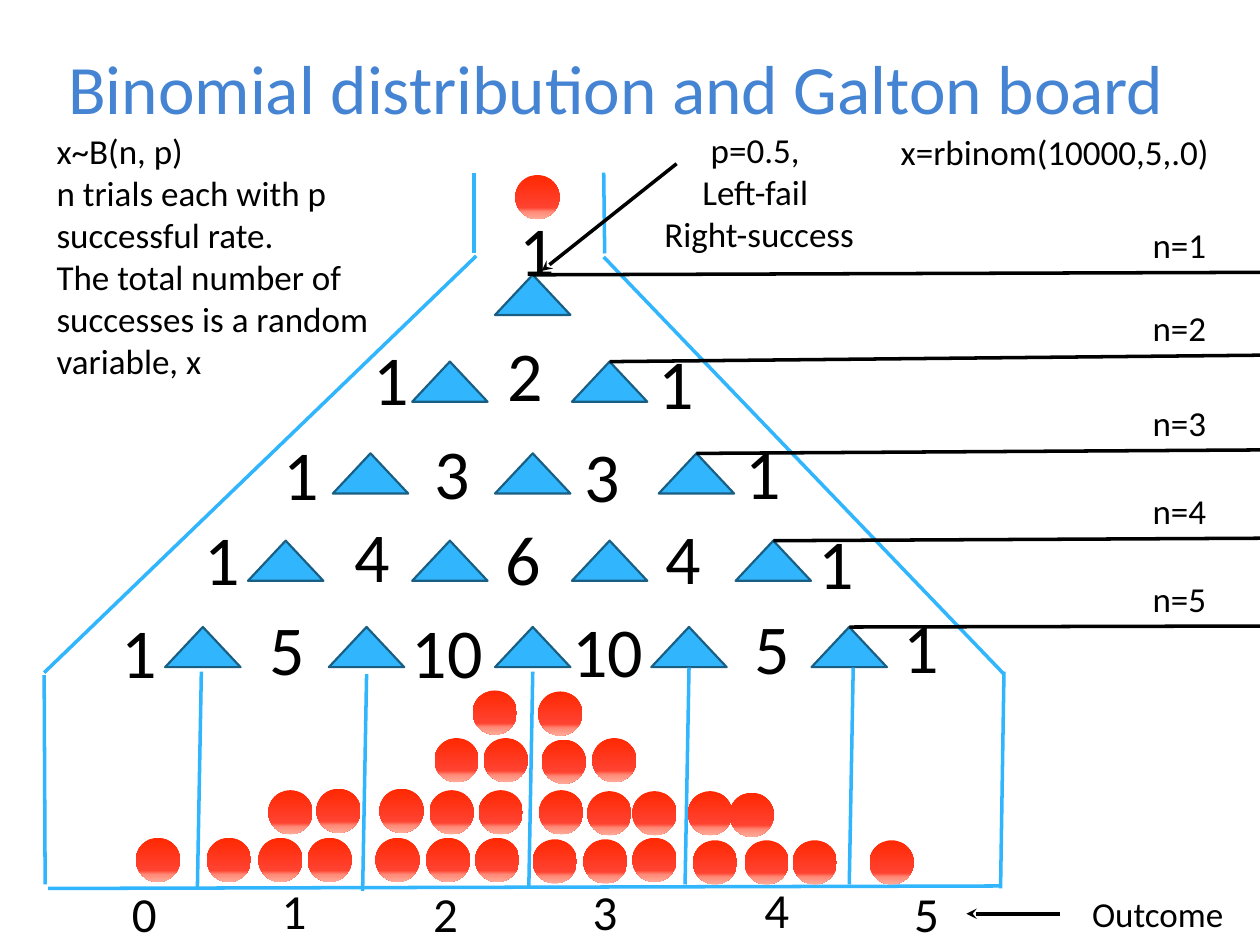
from dataclasses import dataclass
from math import comb

from lxml.etree import SubElement
from pptx import Presentation
from pptx.dml.color import RGBColor
from pptx.enum.shapes import MSO_CONNECTOR, MSO_SHAPE
from pptx.enum.text import MSO_ANCHOR, MSO_AUTO_SIZE, PP_ALIGN
from pptx.oxml import parse_xml
from pptx.oxml.ns import nsdecls, qn
from pptx.util import Cm, Pt

BLACK = RGBColor(0x00, 0x00, 0x00)
TITLE_BLUE = RGBColor(0x45, 0x84, 0xD3)
BOARD_BLUE = RGBColor(0x31, 0xB6, 0xFD)
PEG_EDGE = RGBColor(0x19, 0x5F, 0x84)
BALL_STOPS = (
    (0, RGBColor(0xFF, 0x28, 0x02)),
    (74, RGBColor(0xFF, 0x43, 0x31)),
    (83, RGBColor(0xFF, 0x89, 0x76)),
    (100, RGBColor(0xFF, 0xAA, 0x99)),
)
FONT = "Calibri"

# All lengths below are in centimetres
SLIDE_W, SLIDE_H = 25.4, 19.05
PEG_W, PEG_H = 1.52, 0.81
BALL = 0.89
DIGIT_W, DIGIT_H = 1.6, 1.96
LABEL_H = 1.1


@dataclass(frozen=True)
class PegRow:
    top: float
    lefts: tuple[float, ...]
    guide_y: float
    counts: tuple[tuple[float, float], ...] = ()


PEG_ROWS = (
    PegRow(5.54, (9.98,), 5.49),
    PegRow(7.29, (8.31, 11.53), 7.16,
           ((7.09, 6.63), (9.78, 6.55), (12.83, 6.71))),
    PegRow(9.14, (6.71, 9.98, 13.28), 9.07,
           ((5.28, 8.56), (8.31, 8.53), (11.35, 8.59), (14.58, 8.53))),
    PegRow(10.9, (5.0, 8.31, 11.53, 14.83), 10.85,
           ((3.68, 10.26), (6.71, 10.21), (9.75, 10.26), (12.98, 10.24),
            (16.05, 10.34))),
    PegRow(12.64, (3.33, 6.63, 9.98, 13.13, 16.36), 12.62,
           ((2.01, 12.14), (5.0, 12.09), (8.05, 12.14), (11.28, 12.12),
            (14.76, 12.07), (17.78, 12.04))),
)

WALLS = (
    (9.55, 3.48, 9.55, 5.11),
    (12.17, 3.48, 12.19, 5.11),
    (9.6, 5.16, 0.89, 13.56),
    (12.17, 5.18, 20.24, 13.59),
    (20.17, 17.86, 0.97, 17.91),
    (0.89, 13.61, 0.91, 17.83),
    (20.24, 13.54, 20.17, 17.91),
)
DIVIDER_TOPS = ((4.06, 13.54), (7.39, 13.59), (10.74, 13.54), (13.89, 13.46),
                (17.2, 13.46))
DIVIDER_LEAN, DIVIDER_H = 0.08, 4.37

# Top of each run of balls, with the left edge of every ball in it
BALL_RUNS = (
    (3.53, (10.39,)),
    (16.89, (2.74, 4.17, 5.21, 6.2, 7.57, 8.59, 9.58, 12.75)),
    (16.92, (10.74, 11.76)),
    (16.94, (13.97, 15.01, 15.98, 17.53)),
    (15.93, (5.41, 8.66, 9.65, 10.87)),
    (15.9, (6.38, 7.65)),
    (15.98, (14.71,)),
    (15.95, (11.84, 12.75, 13.87)),
    (14.91, (10.92,)),
    (14.88, (8.76, 9.75, 11.94)),
    (13.94, (10.85,)),
    (13.92, (9.53,)),
)
OUTCOMES = ((2.11, 17.68), (5.13, 17.63), (8.18, 17.68), (11.4, 17.65),
            (14.86, 17.6), (17.88, 17.68))


def write(frame, text: str, *, size: float = 20, color: RGBColor = BLACK,
          align=PP_ALIGN.CENTER) -> None:
    frame.word_wrap = True
    frame.text = text
    for paragraph in frame.paragraphs:
        paragraph.alignment = align
        for run in paragraph.runs:
            run.font.name, run.font.size = FONT, Pt(size)
            run.font.color.rgb = color


def add_label(slide, text: str, left: float, top: float, width: float,
              height: float = LABEL_H, **style) -> None:
    box = slide.shapes.add_textbox(Cm(left), Cm(top), Cm(width), Cm(height))
    write(box.text_frame, text, **style)
    box.text_frame.auto_size = MSO_AUTO_SIZE.SHAPE_TO_FIT_TEXT


def add_count(slide, number: int, left: float, top: float) -> None:
    width = DIGIT_W if number < 10 else 1.94
    add_label(slide, str(number), left, top, width, DIGIT_H, size=40)


def add_line(slide, x1: float, y1: float, x2: float, y2: float, *,
             color: RGBColor = BLACK, arrow: bool = False):
    line = slide.shapes.add_connector(
        MSO_CONNECTOR.STRAIGHT, Cm(x1), Cm(y1), Cm(x2), Cm(y2))
    line.line.color.rgb = color
    line.line.width = Pt(2)
    properties = line.element.spPr
    if arrow:
        SubElement(properties.find(qn("a:ln")), qn("a:tailEnd"), type="stealth")
    SubElement(properties, qn("a:effectLst"))
    return line


def add_peg(slide, left: float, top: float):
    peg = slide.shapes.add_shape(MSO_SHAPE.ISOSCELES_TRIANGLE, Cm(left),
                                 Cm(top), Cm(PEG_W), Cm(PEG_H))
    peg.shadow.inherit = False
    peg.fill.solid()
    peg.fill.fore_color.rgb = BOARD_BLUE
    peg.line.color.rgb = PEG_EDGE
    peg.line.width = Pt(1.25)
    return peg


def add_ball(slide, left: float, top: float) -> None:
    ball = slide.shapes.add_shape(MSO_SHAPE.OVAL, Cm(left), Cm(top),
                                  Cm(BALL), Cm(BALL))
    ball.shadow.inherit = False
    ball.line.fill.background()
    stops = "".join(
        f'<a:gs pos="{percent * 1000}"><a:srgbClr val="{color}"/></a:gs>'
        for percent, color in BALL_STOPS)
    gradient = parse_xml(
        f'<a:gradFill {nsdecls("a")}><a:gsLst>{stops}</a:gsLst>'
        '<a:lin ang="5400000" scaled="0"/></a:gradFill>')
    ball.element.spPr.find(qn("a:prstGeom")).addnext(gradient)


def main() -> None:
    deck = Presentation()
    deck.slide_width, deck.slide_height = Cm(SLIDE_W), Cm(SLIDE_H)
    slide = deck.slides.add_slide(deck.slide_layouts[5])

    # Title and model description
    title = slide.shapes.title
    title.left, title.top = Cm(0.64), Cm(0)
    title.width, title.height = Cm(23.57), Cm(3.48)
    write(title.text_frame, "Binomial distribution and Galton board",
          size=39.6, color=TITLE_BLUE)
    title.text_frame.vertical_anchor = MSO_ANCHOR.MIDDLE
    title.text_frame.auto_size = MSO_AUTO_SIZE.NONE
    add_label(slide, "x~B(n, p)\nn trials each with p successful rate.\n"
              "The total number of successes is a random variable, x",
              0.89, 2.49, 7.34, 5.38, align=PP_ALIGN.LEFT)

    # Board: walls, pegs, bin dividers and balls
    for wall in WALLS:
        add_line(slide, *wall, color=BOARD_BLUE)
    pegs = [[add_peg(slide, left, row.top) for left in row.lefts]
            for row in PEG_ROWS]
    for x, y in DIVIDER_TOPS:
        add_line(slide, x, y, x - DIVIDER_LEAN, y + DIVIDER_H, color=BOARD_BLUE)
    for top, lefts in BALL_RUNS:
        for left in lefts:
            add_ball(slide, left, top)

    # Pascal's triangle between the pegs, and a guide line for each trial
    add_count(slide, comb(0, 0), 10.03, 4.04)
    for n, (row, row_pegs) in enumerate(zip(PEG_ROWS, pegs), start=1):
        for k, (left, top) in enumerate(row.counts):
            add_count(slide, comb(n, k), left, top)
        guide = add_line(slide, SLIDE_W, row.guide_y, row.lefts[-1], row.top)
        guide.end_connect(row_pegs[-1], 0)
        add_label(slide, f"n={n}", 22.53, row.guide_y - LABEL_H, 2.49)

    # Probability at the first peg
    add_line(slide, 13.64, 3.3, 10.92, 5.46, arrow=True)
    add_label(slide, "p=0.5, \nLeft-fail \nRight-success",
              12.83, 2.46, 4.95, 2.82)
    add_label(slide, "x=rbinom(10000,5,.0)", 17.2, 2.51, 8.13)

    # Outcome axis
    for outcome, (left, top) in enumerate(OUTCOMES):
        add_label(slide, str(outcome), left, top, DIGIT_W, 1.45, size=28)
    add_line(slide, 21.36, 18.42, 19.48, 18.42, arrow=True)
    add_label(slide, "Outcome", 21.36, 17.86, 3.96)

    deck.save("out.pptx")


if __name__ == "__main__":
    main()
